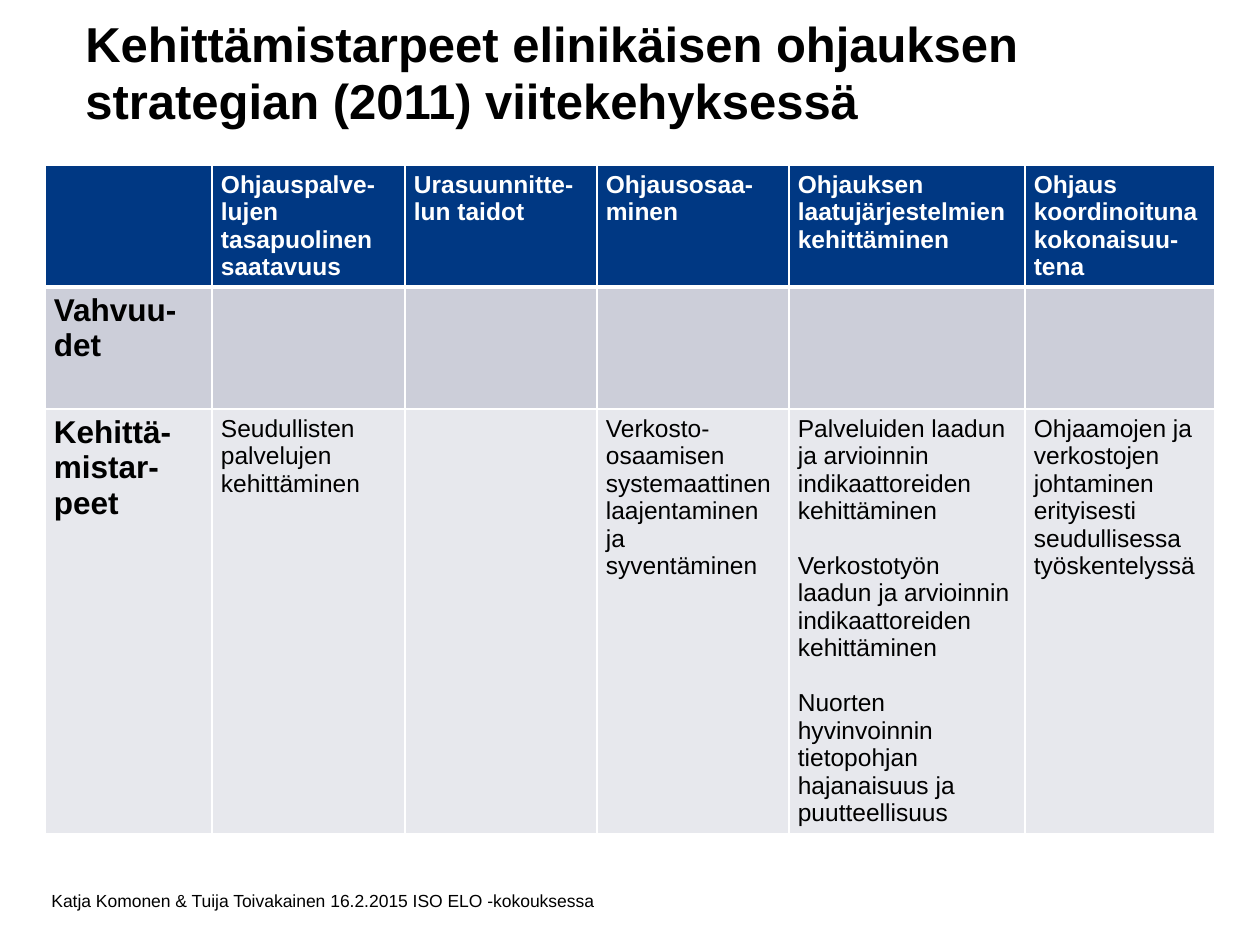
from pptx import Presentation
from pptx.dml.color import RGBColor
from pptx.enum.text import MSO_ANCHOR
from pptx.oxml import parse_xml
from pptx.oxml.ns import nsdecls
from pptx.util import Emu, Pt

TOP, MIDDLE = MSO_ANCHOR.TOP, MSO_ANCHOR.MIDDLE
PX = 914400 // 126
THEME = {
    "font": "Arial", "white": "FFFFFF", "black": "000000",
    "fills": ["003883", "CCCED9", "E7E8ED"],
    "title": 28, "label": 18, "body": 14, "foot": 10,
}


def write(frame, texts, size, color, bold=False, gap=0):
    frame.word_wrap = True
    for i, text in enumerate(texts):
        para = frame.paragraphs[0] if i == 0 else frame.add_paragraph()
        if i:
            para.space_before = Emu(gap * PX)
        run = para.add_run()
        run.text = text
        run.font.name = THEME["font"]
        run.font.size = Pt(size)
        run.font.bold = bold
        run.font.color.rgb = RGBColor.from_string(color)


def edge(cell, side, width):
    cell._tc.get_or_add_tcPr().append(parse_xml(
        f'<a:ln{side} {nsdecls("a")} w="{Pt(width)}"><a:solidFill>'
        f'<a:srgbClr val="{THEME["white"]}"/></a:solidFill></a:ln{side}>'))


prs = Presentation()
prs.slide_width, prs.slide_height = Emu(1260 * PX), Emu(945 * PX)
slide = prs.slides.add_slide(prs.slide_layouts[6])

cols = [167, 193, 192, 192, 236, 190]
rows = [122, 122, 425]
data = [
    [[], ["Ohjauspalve-lujen tasapuolinen saatavuus"],
     ["Urasuunnitte-lun taidot"], ["Ohjausosaa-minen"],
     ["Ohjauksen laatujärjestelmien kehittäminen"],
     ["Ohjaus koordinoituna kokonaisuu-tena"]],
    [["Vahvuu-det"], [], [], [], [], []],
    [["Kehittä-mistar-peet"], ["Seudullisten palvelujen kehittäminen"], [],
     ["Verkosto-osaamisen systemaattinen laajentaminen ja syventäminen"],
     ["Palveluiden laadun ja arvioinnin indikaattoreiden kehittäminen",
      "Verkostotyön laadun ja arvioinnin indikaattoreiden kehittäminen",
      "Nuorten hyvinvoinnin tietopohjan hajanaisuus ja puutteellisuus"],
     ["Ohjaamojen ja verkostojen johtaminen erityisesti seudullisessa työskentelyssä"]],
]

table = slide.shapes.add_table(
    len(rows), len(cols), Emu(45 * PX), Emu(165 * PX),
    Emu(sum(cols) * PX), Emu(sum(rows) * PX)).table
for col, width in zip(table.columns, cols):
    col.width = Emu(width * PX)
for row, height in zip(table.rows, rows):
    row.height = Emu(height * PX)

for r, line in enumerate(data):
    for c, texts in enumerate(line):
        cell = table.cell(r, c)
        cell.margin_left = cell.margin_right = Emu(9 * PX)
        cell.margin_top = cell.margin_bottom = Emu(6 * PX)
        for side in "LRTB":
            thick = (r, side) in [(0, "B"), (1, "T")]
            edge(cell, side, 3 if thick else 1)
        cell.fill.solid()
        cell.fill.fore_color.rgb = RGBColor.from_string(THEME["fills"][r])
        head, label = r == 0, r > 0 and c == 0
        write(cell.text_frame, texts, THEME["label" if label else "body"],
              THEME["white" if head else "black"], head or label, 27)

notes = [
    ("Kehittämistarpeet elinikäisen ohjauksen strategian (2011) viitekehyksessä",
     (73, 11, 1086, 134), "title", True, TOP, 0.97),
    ("Katja Komonen & Tuija Toivakainen 16.2.2015 ISO ELO -kokouksessa",
     (39, 876, 876, 50), "foot", False, MIDDLE, 1.0),
]
for text, place, size, bold, anchor, space in notes:
    box = slide.shapes.add_textbox(*[Emu(v * PX) for v in place])
    box.text_frame.vertical_anchor = anchor
    write(box.text_frame, [text], THEME[size], THEME["black"], bold)
    box.text_frame.paragraphs[0].line_spacing = space

prs.save("out.pptx")
